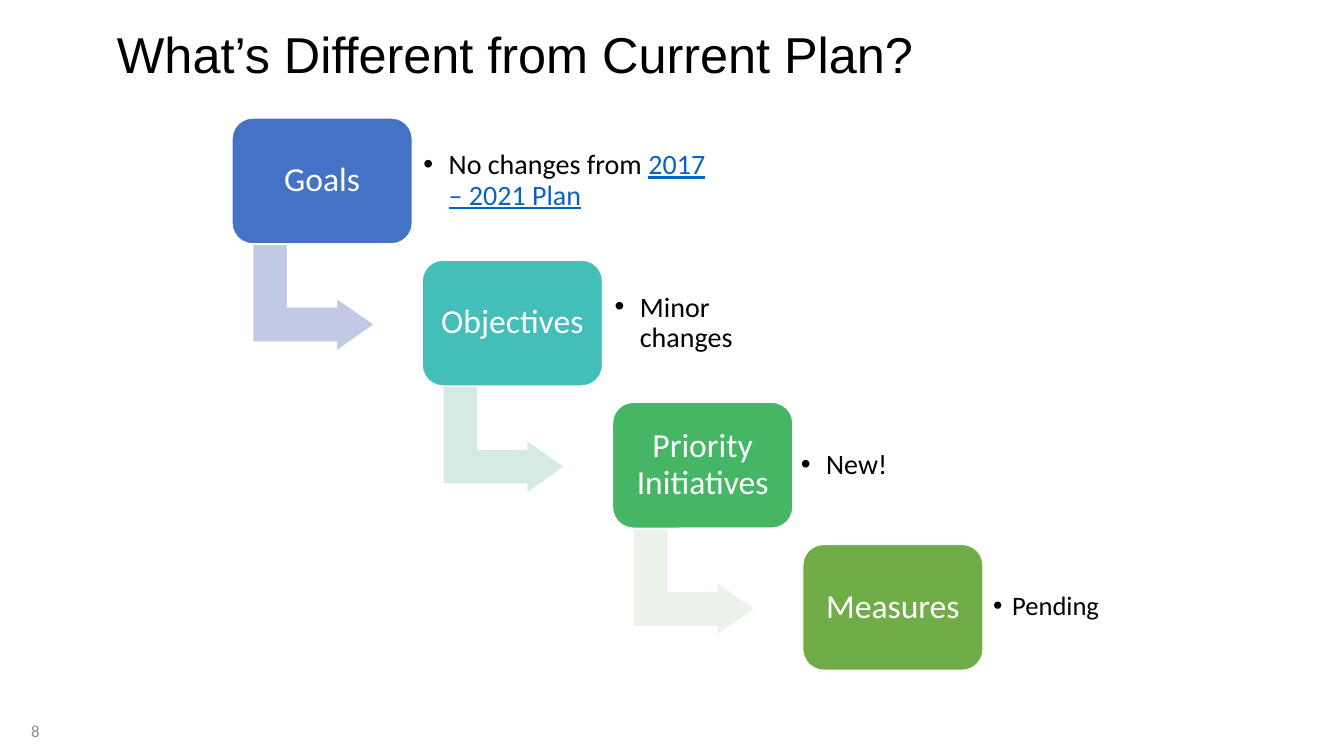
from collections import namedtuple

from lxml.etree import SubElement
from pptx import Presentation
from pptx.dml.color import RGBColor
from pptx.enum.shapes import MSO_SHAPE as Preset
from pptx.enum.text import MSO_ANCHOR as Anchor, PP_ALIGN as Align
from pptx.oxml.ns import qn
from pptx.util import Inches, Pt

COLORS = {
    "black": "000000", "white": "FFFFFF", "link": "0563C1", "number": "8C8C8C",
    "blue": "4472C4", "teal": "43BEB9", "green": "45B664", "olive": "70AD47",
    "pale blue": "C1C9E4", "pale teal": "D6EAE5", "pale green": "EBF2E9",
}
# The staircase moves one column right and one row down at each stage.
FIRST_LEFT, FIRST_TOP = 2.3, 1.17
COLUMN, ROW = 1.887, 1.41
BOX_WIDTH, BOX_HEIGHT = 1.79, 1.25
ARROW_WIDTH, ARROW_HEIGHT = 1.06, 1.21
NOTE_HEIGHT = 1.01

Stage = namedtuple("Stage", "name color arrow note gap width size indent inset")
STAGES = [
    Stage("Goals", "blue", "pale blue",
          [("No changes from ", "black"), ("2017 – 2021 Plan", "link")],
          0.03, 3.02, 20, 0.25, 0.08),
    Stage("Objectives", "teal", "pale teal", [("Minor changes", "black")],
          0.04, 1.77, 20, 0.25, 0.08),
    Stage("Priority Initiatives", "green", "pale green", [("New!", "black")],
          0, 1.3, 20, 0.25, 0.08),
    Stage("Measures", "olive", None, [("Pending", "black")],
          0, 1.3, 19, 0.19, 0.1),
]


def rgb(name):
    return RGBColor.from_string(COLORS[name])


def add_run(paragraph, text, size, color, font="Calibri"):
    run = paragraph.add_run()
    run.text = text
    run.font.size = Pt(size)
    run.font.name = font
    run.font.color.rgb = rgb(color)
    return run


def prepare_frame(shape, inset):
    """Set wrapping, middle anchor and side margins; return the first paragraph."""
    frame = shape.text_frame
    frame.word_wrap = True
    frame.vertical_anchor = Anchor.MIDDLE
    frame.margin_left = frame.margin_right = Inches(inset)
    frame.margin_top = frame.margin_bottom = Inches(min(inset, 0.1))
    return frame.paragraphs[0]


def add_bullet(paragraph, indent):
    properties = paragraph._p.get_or_add_pPr()
    properties.set("marL", str(Inches(indent)))
    properties.set("indent", str(-Inches(indent)))
    SubElement(properties, qn("a:buFont")).set("typeface", "Arial")
    SubElement(properties, qn("a:buChar")).set("char", "•")


def add_preset(slide, preset, left, top, width, height, color):
    shape = slide.shapes.add_shape(
        preset, Inches(left), Inches(top), Inches(width), Inches(height))
    shape.shadow.inherit = False
    shape.fill.solid()
    shape.fill.fore_color.rgb = rgb(color)
    shape.line.color.rgb = rgb("white")
    shape.line.width = Pt(1)
    return shape


def add_step_arrow(slide, left, top, color):
    arrow = add_preset(slide, Preset.BENT_UP_ARROW, left, top,
                       ARROW_WIDTH, ARROW_HEIGHT, color)
    arrow.rotation = 90
    for index, value in enumerate((0.328, 0.25, 0.358)):
        arrow.adjustments[index] = value


def add_stage_box(slide, left, top, stage):
    box = add_preset(slide, Preset.ROUNDED_RECTANGLE, left, top,
                     BOX_WIDTH, BOX_HEIGHT, stage.color)
    paragraph = prepare_frame(box, 0.1)
    paragraph.alignment = Align.CENTER
    paragraph.line_spacing = 0.9
    add_run(paragraph, stage.name, 24, "white")


def add_note(slide, left, top, stage):
    note = slide.shapes.add_textbox(
        Inches(left), Inches(top), Inches(stage.width), Inches(NOTE_HEIGHT))
    paragraph = prepare_frame(note, stage.inset)
    add_bullet(paragraph, stage.indent)
    paragraph.line_spacing = 0.9
    for text, color in stage.note:
        run = add_run(paragraph, text, stage.size, color)
        if color == "link":
            run.font.underline = True


def add_stage(slide, index, stage):
    left = FIRST_LEFT + index * COLUMN
    top = FIRST_TOP + index * ROW
    if stage.arrow:
        add_step_arrow(slide, left + 0.28, top + 1.18, stage.arrow)
    add_stage_box(slide, left, top, stage)
    add_note(slide, left + BOX_WIDTH + stage.gap,
             top + (BOX_HEIGHT - NOTE_HEIGHT) / 2, stage)


def set_title(slide, text):
    title = slide.shapes.title
    title.left, title.top = Inches(1.06), Inches(0.09)
    title.width, title.height = Inches(11.5), Inches(0.96)
    paragraph = prepare_frame(title, 0.1)
    paragraph.alignment = Align.LEFT
    paragraph.line_spacing = 0.9
    add_run(paragraph, text, 36, "black", "Arial")


def add_slide_number(slide, number):
    box = slide.shapes.add_textbox(0, Inches(7.05), Inches(0.49), Inches(0.4))
    paragraph = prepare_frame(box, 0.1)
    paragraph.alignment = Align.RIGHT
    add_run(paragraph, number, 12, "number")


def main():
    presentation = Presentation()
    presentation.slide_width = Inches(13.33)
    presentation.slide_height = Inches(7.5)
    title_only = presentation.slide_layouts[5]
    slide = presentation.slides.add_slide(title_only)
    set_title(slide, "What’s Different from Current Plan?")
    for index, stage in enumerate(STAGES):
        add_stage(slide, index, stage)
    add_slide_number(slide, "8")
    presentation.save("out.pptx")


if __name__ == "__main__":
    main()
